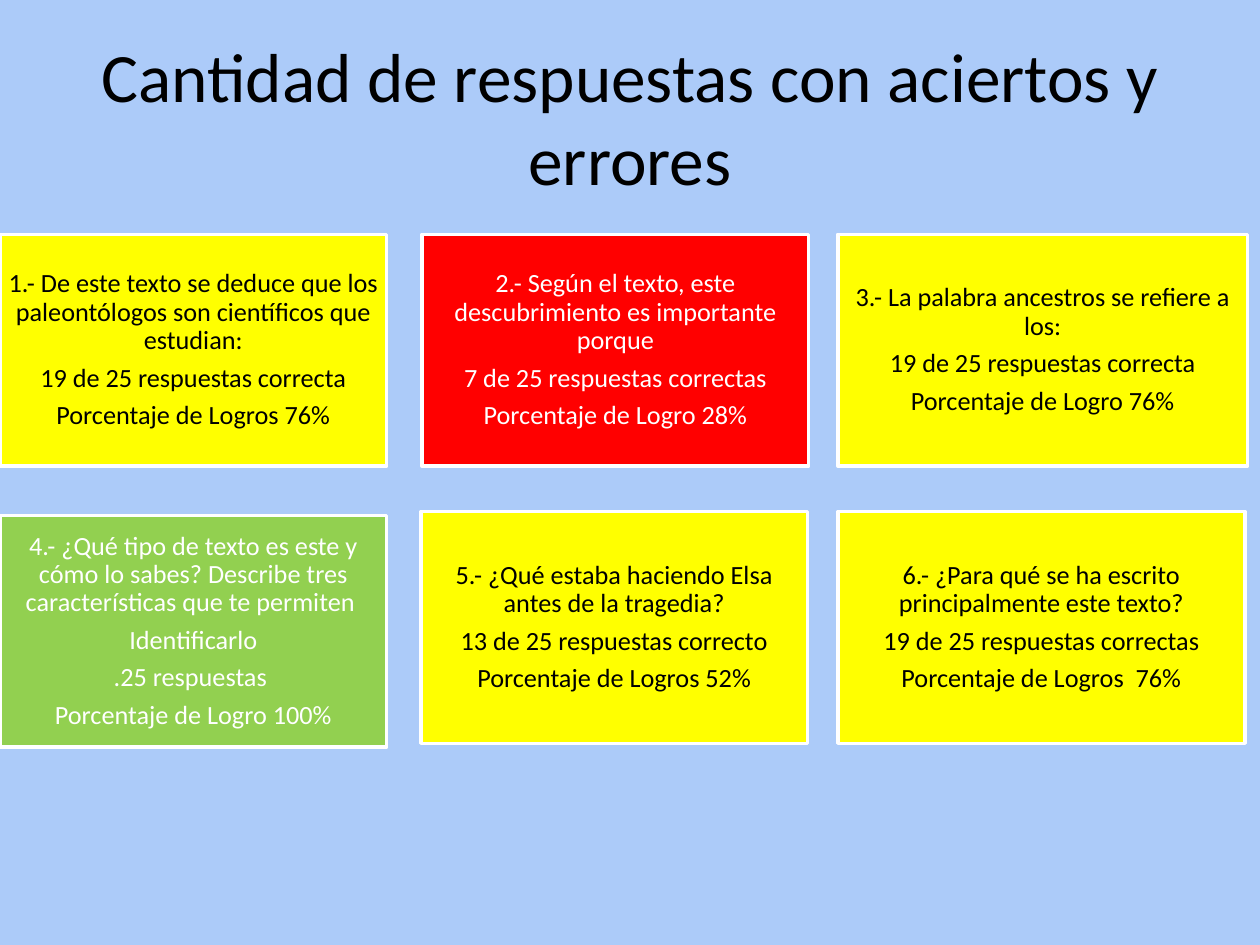
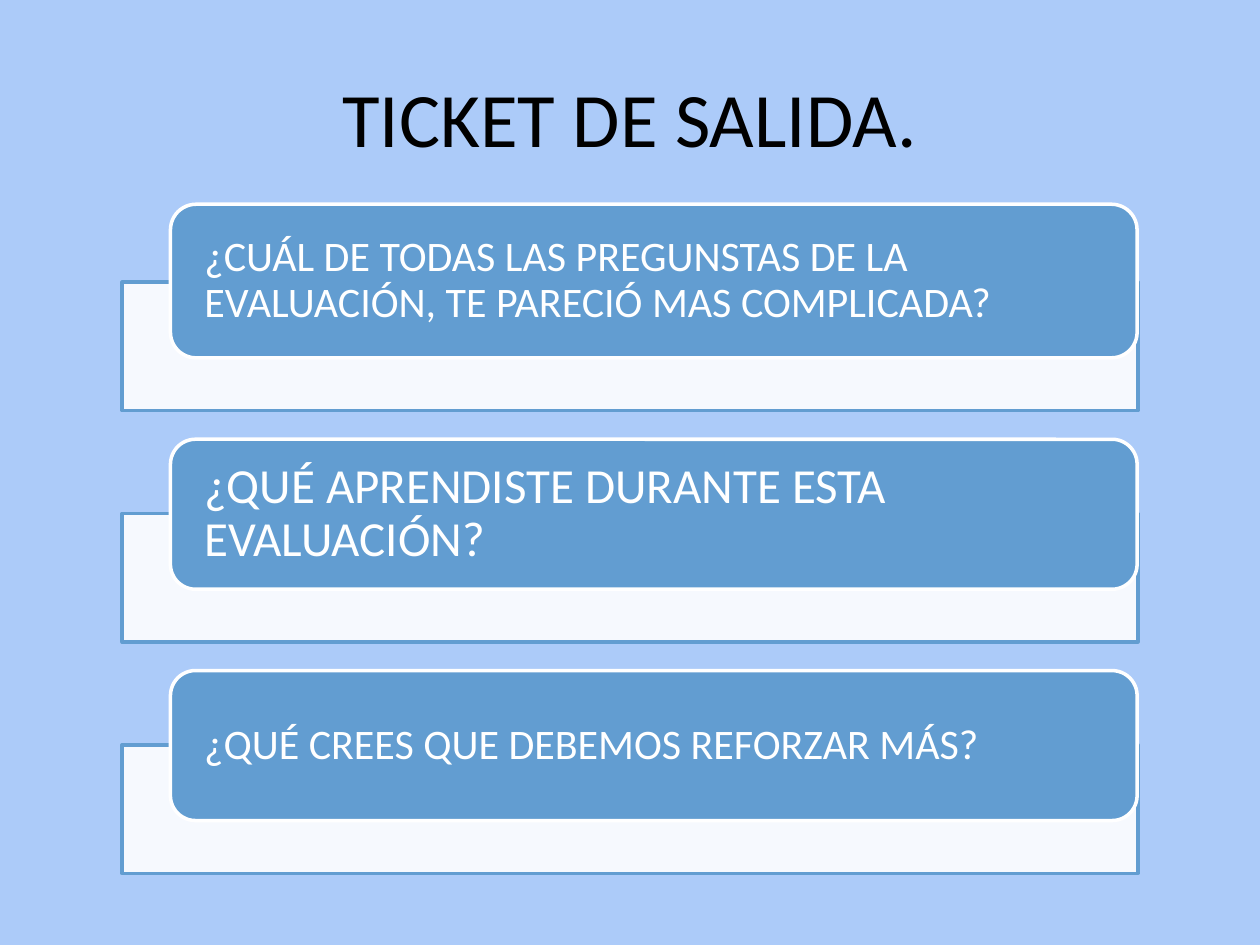
from lxml.etree import SubElement
from pptx import Presentation
from pptx.dml.color import RGBColor
from pptx.enum.shapes import MSO_SHAPE as Preset
from pptx.enum.text import MSO_ANCHOR as Anchor, MSO_AUTO_SIZE as AutoSize, PP_ALIGN as Align
from pptx.oxml.ns import qn
from pptx.util import Pt

FONT = "Calibri"
SKY, BLUE, WHITE, BLACK = "ACCBF9", "629DD1", "FFFFFF", "000000"
YELLOW, RED, GREEN = "FFFF00", "FF0000", "92D050"
TITLE_ONLY = 5
CARD_HEIGHT = 132.5

QUESTIONS = [
    (0, 133.9, 221, YELLOW, BLACK,
     ["1.- De este texto se deduce que los paleontólogos son científicos que estudian:",
      "19 de 25 respuestas correcta", "Porcentaje de Logros 76%"]),
    (241.2, 133.9, 221, RED, WHITE,
     ["2.- Según el texto, este descubrimiento es importante porque",
      "7 de 25 respuestas correctas", "Porcentaje de Logro 28%"]),
    (478.8, 133.9, 234, YELLOW, BLACK,
     ["3.- La palabra ancestros se refiere a los:",
      "19 de 25 respuestas correcta", "Porcentaje de Logro 76%"]),
    (0, 294.5, 221, GREEN, WHITE,
     ["4.- ¿Qué tipo de texto es este y cómo lo sabes? Describe tres "
      "características que te permiten ",
      "Identificarlo", ".25 respuestas ", "Porcentaje de Logro 100%"]),
    (240.5, 292.3, 221, YELLOW, BLACK,
     ["5.- ¿Qué estaba haciendo Elsa antes de la tragedia?",
      "13 de 25 respuestas correcto", "Porcentaje de Logros 52%"]),
    (478.8, 292.3, 232.6, YELLOW, BLACK,
     ["6.- ¿Para qué se ha escrito principalmente este texto?",
      "19 de 25 respuestas correctas", "Porcentaje de Logros  76%"]),
]

TICKET_PROMPTS = [
    ("¿CUÁL DE TODAS LAS PREGUNSTAS DE LA EVALUACIÓN, TE PARECIÓ MAS COMPLICADA?", 24, 87.8),
    ("¿QUÉ APRENDISTE DURANTE ESTA EVALUACIÓN?", 28, 85.7),
    ("¿QUÉ CREES QUE DEBEMOS REFORZAR MÁS?", 24, 85.7),
]


def paint(color_format, hex_color):
    color_format.rgb = RGBColor.from_string(hex_color)


def paint_fill(fill, hex_color):
    fill.solid()
    paint(fill.fore_color, hex_color)


def add_run(paragraph, text, size, color):
    run = paragraph.add_run()
    run.text = text
    run.font.name = FONT
    run.font.size = Pt(size)
    paint(run.font.color, color)


def add_titled_slide(deck, text, size):
    slide = deck.slides.add_slide(deck.slide_layouts[TITLE_ONLY])
    title = slide.shapes.title
    title.left, title.top, title.width, title.height = Pt(36), Pt(21.6), Pt(648), Pt(90)
    frame = title.text_frame
    frame.auto_size = AutoSize.NONE
    frame.vertical_anchor = Anchor.MIDDLE
    heading = frame.paragraphs[0]
    heading.alignment = Align.CENTER
    add_run(heading, text, size, BLACK)
    return slide


def add_panel(slide, preset, left, top, width, height, fill, line):
    panel = slide.shapes.add_shape(preset, Pt(left), Pt(top), Pt(width), Pt(height))
    panel.shadow.inherit = False
    paint_fill(panel.fill, fill)
    paint(panel.line.color, line)
    panel.line.width = Pt(2)
    return panel


def write_lines(panel, lines, size, color, align, side_inset, end_inset):
    frame = panel.text_frame
    frame.word_wrap = True
    frame.vertical_anchor = Anchor.MIDDLE
    frame.margin_left = frame.margin_right = Pt(side_inset)
    frame.margin_top = frame.margin_bottom = Pt(end_inset)
    for index, text in enumerate(lines):
        paragraph = frame.add_paragraph() if index else frame.paragraphs[0]
        paragraph.alignment = align
        paragraph.line_spacing = 0.9
        paragraph.space_after = Pt(0.35 * size)
        add_run(paragraph, text, size, color)


def set_opacity(panel, percent):
    color = panel.fill._xPr.find(qn("a:solidFill"))[0]
    SubElement(color, qn("a:alpha")).set("val", str(percent * 1000))


def add_question_card(slide, left, top, width, fill, ink, lines):
    card = add_panel(slide, Preset.RECTANGLE, left, top, width, CARD_HEIGHT, fill, WHITE)
    write_lines(card, lines, 15, ink, Align.CENTER, 4.3, 4.3)


def add_ticket_prompt(slide, base_top, text, size, tab_height):
    base = add_panel(slide, Preset.RECTANGLE, 69.8, base_top, 580.4, 73.4, WHITE, BLUE)
    set_opacity(base, 90)
    tab_top = base_top + 43.2 - tab_height
    tab = add_panel(slide, Preset.ROUNDED_RECTANGLE, 97.4, tab_top, 552.4, tab_height, BLUE, WHITE)
    write_lines(tab, [text], size, WHITE, Align.LEFT, 15.1, 0)


def main():
    deck = Presentation()
    deck.slide_width, deck.slide_height = Pt(720), Pt(540)
    paint_fill(deck.slide_master.background.fill, SKY)

    results = add_titled_slide(deck, "Cantidad de respuestas con aciertos y errores", 39.6)
    for question in QUESTIONS:
        add_question_card(results, *question)

    exit_ticket = add_titled_slide(deck, "TICKET DE SALIDA.", 44)
    for index, prompt in enumerate(TICKET_PROMPTS):
        add_ticket_prompt(exit_ticket, 161.3 + 132.2 * index, *prompt)

    deck.save("out.pptx")


if __name__ == "__main__":
    main()
